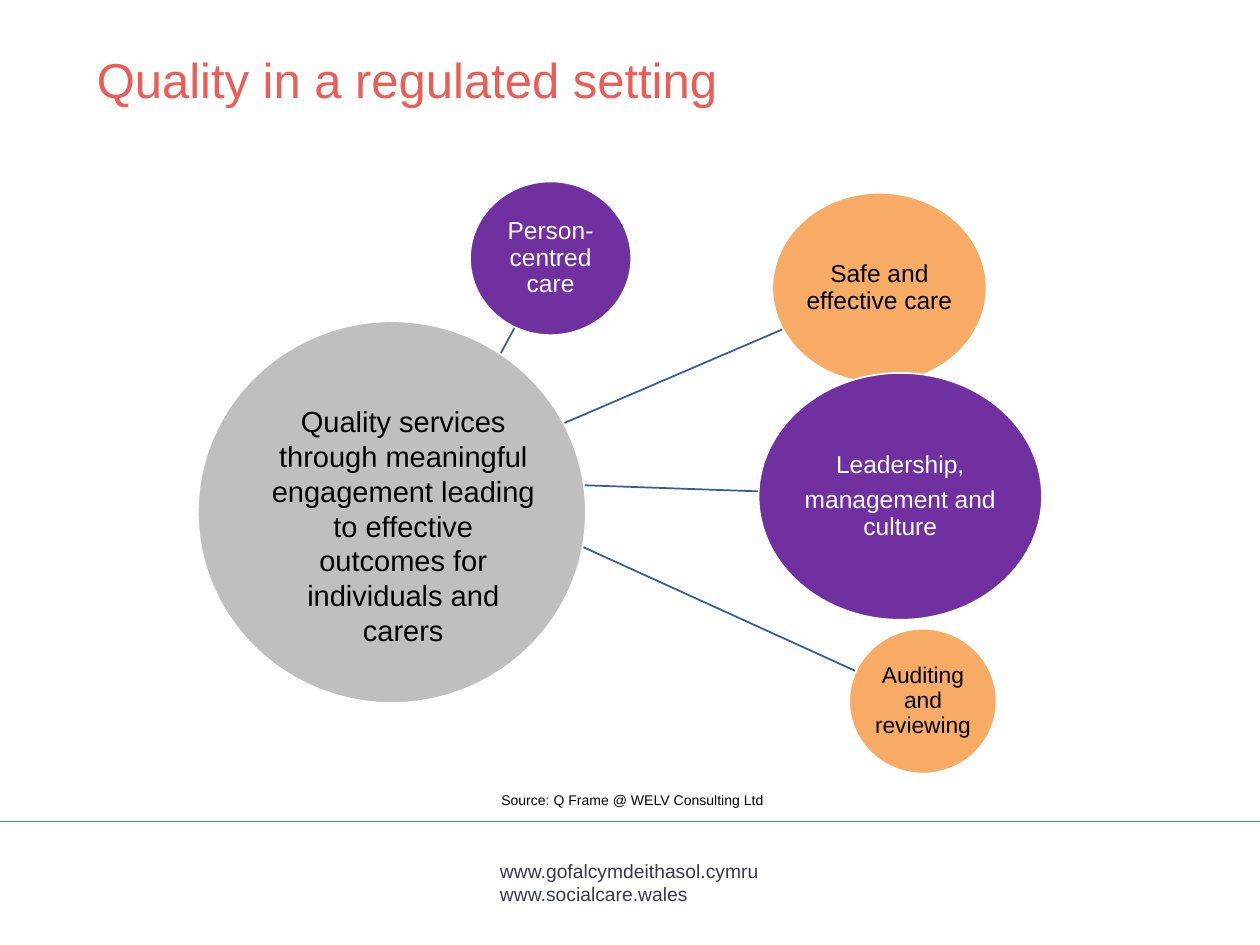
from lxml import etree
from pptx import Presentation
from pptx.dml.color import RGBColor
from pptx.enum.shapes import MSO_CONNECTOR, MSO_SHAPE
from pptx.enum.text import MSO_ANCHOR, PP_ALIGN
from pptx.oxml.ns import qn
from pptx.util import Inches, Pt

CORAL = RGBColor(0xEB, 0x5E, 0x57)
SLATE = RGBColor(0x37, 0x39, 0x4C)
GREEN = RGBColor(0x16, 0xAD, 0x85)
BLUE = RGBColor(0x36, 0x5B, 0x9D)
GREY = RGBColor(0xBF, 0xBF, 0xBF)
PURPLE = RGBColor(0x70, 0x30, 0xA0)
ORANGE = RGBColor(0xF7, 0xAB, 0x64)
BLACK = RGBColor(0, 0, 0)
WHITE = RGBColor(0xFF, 0xFF, 0xFF)

prs = Presentation()
prs.slide_width, prs.slide_height = Inches(10), Inches(7.5)
s = prs.slides.add_slide(prs.slide_layouts[6])


def write(sp, text, size, color, align=PP_ALIGN.LEFT, anchor=MSO_ANCHOR.TOP,
          spacing=None, after=None):
    tf = sp.text_frame
    tf.word_wrap = True
    tf.vertical_anchor = anchor
    tf.text = text
    for p in tf.paragraphs:
        p.alignment = align
        p.line_spacing = spacing
        p.space_after = after
        for r in p.runs:
            r.font.name = "Arial"
            r.font.size = Pt(size)
            r.font.color.rgb = color


def add_line(x1, y1, x2, y2, color):
    line = s.shapes.add_connector(MSO_CONNECTOR.STRAIGHT, Inches(x1), Inches(y1),
                                  Inches(x2), Inches(y2))
    line.line.color.rgb = color
    line.line.width = Pt(1)
    etree.SubElement(line._element.spPr, qn("a:effectLst"))


# Footer rule and spokes lie behind the circles
add_line(0, 6.52, 10, 6.52, GREEN)
for ends in [(4.03, 4.07, 6.8, 5.33), (4.03, 3.83, 6.03, 3.9),
             (4.03, 3.55, 6.22, 2.61), (3.75, 3.22, 4.09, 2.59)]:
    add_line(*ends, BLUE)

# left, top, width, height, fill, text, size, text colour
circles = [
    (1.57, 2.55, 3.08, 3.03, GREY, "", 14, BLACK),
    (3.73, 1.44, 1.28, 1.22, PURPLE, "Person-centred care", 14, WHITE),
    (6.13, 1.53, 1.7, 1.51, ORANGE, "Safe and effective care", 14, BLACK),
    (6.02, 2.96, 2.25, 1.96, PURPLE, "Leadership,\nmanagement and culture", 14, WHITE),
    (6.74, 4.99, 1.17, 1.15, ORANGE, "Auditing and reviewing", 13, BLACK),
]
for x, y, w, h, fill, text, size, color in circles:
    sp = s.shapes.add_shape(MSO_SHAPE.OVAL, Inches(x), Inches(y), Inches(w), Inches(h))
    sp.shadow.inherit = False
    sp.fill.solid()
    sp.fill.fore_color.rgb = fill
    sp.line.color.rgb = WHITE
    sp.line.width = Pt(1)
    tf = sp.text_frame
    tf.margin_left = tf.margin_right = tf.margin_top = tf.margin_bottom = Inches(0.01)
    if text:
        write(sp, text, size, color, PP_ALIGN.CENTER, MSO_ANCHOR.MIDDLE, 0.9, Pt(5))

# left, top, width, height, text, size, colour, alignment, anchor, line spacing
labels = [
    (0.67, 0.4, 8.69, 1.13, "Quality in a regulated setting", 28, CORAL,
     PP_ALIGN.LEFT, MSO_ANCHOR.TOP, 0.9),
    (2.05, 3.1, 2.3, 2.14, "Quality services through meaningful engagement leading "
     "to effective outcomes for individuals and carers", 16.6, BLACK,
     PP_ALIGN.CENTER, MSO_ANCHOR.MIDDLE, None),
    (3.88, 6.17, 3.81, 0.36, "Source: Q Frame @ WELV Consulting Ltd", 8, BLACK,
     PP_ALIGN.LEFT, MSO_ANCHOR.MIDDLE, None),
    (3.87, 6.77, 2.26, 0.46, "www.gofalcymdeithasol.cymru\nwww.socialcare.wales", 11, SLATE,
     PP_ALIGN.LEFT, MSO_ANCHOR.TOP, None),
]
for x, y, w, h, *style in labels:
    box = s.shapes.add_textbox(Inches(x), Inches(y), Inches(w), Inches(h))
    write(box, *style)

prs.save("out.pptx")
